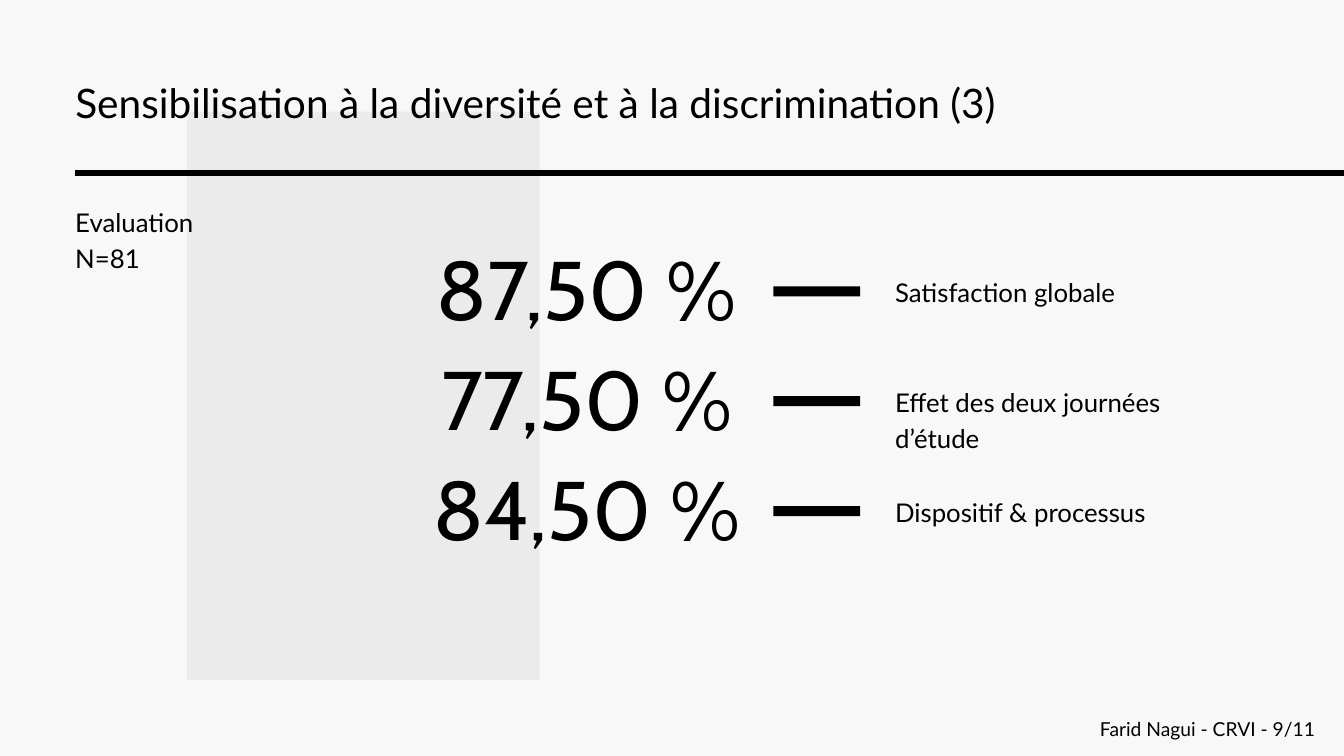
import pptx
import pptx.dml.color
import pptx.enum.shapes
import pptx.enum.text
import pptx.oxml.ns
import pptx.util
from lxml import etree
from pptx.util import Inches

ALIGN = pptx.enum.text.PP_ALIGN
BLACK = "000000"
RESULTS = [
    ("87,50 %", "Satisfaction globale"),
    ("77,50 %", "Effet des deux journées d’étude"),
    ("84,50 %", "Dispositif & processus"),
]


def color(hex_value):
    return pptx.dml.color.RGBColor.from_string(hex_value)


def write_text(box, text, *, size, leading, font="Lato", align=ALIGN.LEFT):
    frame = box.text_frame
    frame.word_wrap = True
    frame.auto_size = pptx.enum.text.MSO_AUTO_SIZE.NONE
    frame.vertical_anchor = pptx.enum.text.MSO_ANCHOR.TOP
    frame.margin_left = frame.margin_right = 0
    frame.margin_top = frame.margin_bottom = 0
    for index, line in enumerate(text.split("\n")):
        para = frame.add_paragraph() if index else frame.paragraphs[0]
        para.alignment = align
        para.line_spacing = pptx.util.Pt(leading)
        para.space_before = pptx.util.Pt(0)
        span = para.add_run()
        span.text = line
        span.font.name = font
        span.font.size = pptx.util.Pt(size)
        span.font.color.rgb = color(BLACK)


def add_text(page, text, left, top, width, height, **text_format):
    box = page.shapes.add_textbox(
        Inches(left), Inches(top), Inches(width), Inches(height))
    write_text(box, text, **text_format)


def add_block(page, left, top, width, height, opacity=100):
    block = page.shapes.add_shape(
        pptx.enum.shapes.MSO_SHAPE.RECTANGLE,
        Inches(left), Inches(top), Inches(width), Inches(height))
    block.shadow.inherit = False
    block.fill.solid()
    block.fill.fore_color.rgb = color(BLACK)
    block.line.fill.background()
    if opacity < 100:
        fill = block.fill._xPr.find(".//" + pptx.oxml.ns.qn("a:srgbClr"))
        alpha = etree.SubElement(fill, pptx.oxml.ns.qn("a:alpha"))
        alpha.set("val", str(opacity * 1000))


def add_header(page, left, top, width, height):
    title = page.shapes.title
    title.left, title.top = Inches(left), Inches(top)
    title.width, title.height = Inches(width), Inches(height)
    write_text(title, "Sensibilisation à la diversité et à la discrimination (3)",
               size=43.5, leading=61)
    rule_top = Inches(top + 1.54)
    rule = page.shapes.add_connector(
        pptx.enum.shapes.MSO_CONNECTOR.STRAIGHT,
        Inches(left), rule_top, Inches(20), rule_top)
    rule.line.color.rgb = color(BLACK)
    rule.line.width = pptx.util.Pt(6.75)
    etree.SubElement(rule._element.spPr, pptx.oxml.ns.qn("a:effectLst"))


def add_result(page, value, label, left, top):
    add_text(page, value, left, top, 8.12, 1.47,
             size=89, leading=106.8, font="Cabin", align=ALIGN.CENTER)
    add_block(page, left + 6.84, top + 0.73, 1.29, 0.15)
    add_text(page, label, left + 8.65, top + 0.51, 4.24, 1.05,
             size=27.6, leading=38.6)


def add_results(page, left, top, row_height):
    for row, (value, label) in enumerate(RESULTS):
        add_result(page, value, label, left, top + row * row_height)


def build_slide(deck):
    page = deck.slides.add_slide(deck.slide_layouts[5])
    page.background.fill.solid()
    page.background.fill.fore_color.rgb = color("F8F8F8")
    add_block(page, 2.78, 1.66, 5.25, 8.46, opacity=5)
    add_header(page, 1.12, 1.03, 18.07, 1.64)
    add_text(page, "Evaluation\nN=81", 1.12, 3, 4.24, 1.05,
             size=27.6, leading=38.6)
    add_results(page, 4.67, 3.53, 1.635)
    add_text(page, "Farid Nagui - CRVI - 9/11", 11.05, 10.62, 8.52, 0.39,
             size=20.6, leading=28.8, align=ALIGN.RIGHT)


def main():
    deck = pptx.Presentation()
    deck.slide_width = Inches(20)
    deck.slide_height = Inches(11.25)
    build_slide(deck)
    deck.save("out.pptx")


if __name__ == "__main__":
    main()
